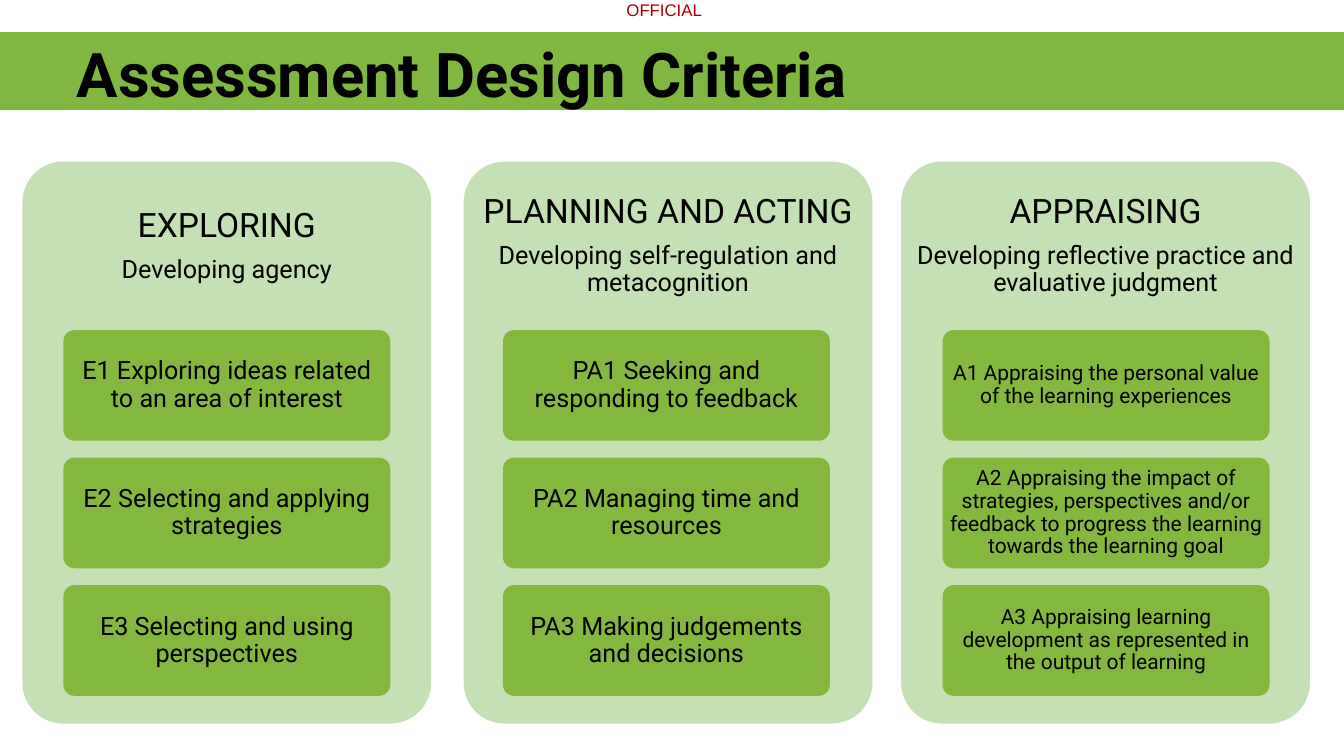
import pptx
import pptx.dml.color
import pptx.enum.shapes
import pptx.enum.text
import pptx.util
from dataclasses import dataclass

Pt = pptx.util.Pt
Shape = pptx.enum.shapes.MSO_SHAPE
Anchor = pptx.enum.text.MSO_ANCHOR
Align = pptx.enum.text.PP_ALIGN


@dataclass
class Theme:
    banner: str = "80B740"
    panel: str = "C5E0B4"
    card: str = "83B73D"
    ink: str = "000000"
    label: str = "A80000"
    font: str = "Roboto"
    label_font: str = "Arial"
    title_size: int = 44
    heading_size: int = 24
    body_size: int = 18
    small_size: int = 15
    label_size: int = 12


class Deck:
    def __init__(self, theme):
        self.theme = theme
        self.prs = pptx.Presentation()
        self.prs.slide_width = Pt(960)
        self.prs.slide_height = Pt(540)
        self.s = self.prs.slides.add_slide(self.prs.slide_layouts[6])

    def box(self, kind, at, fill):
        sp = self.s.shapes.add_shape(kind, *map(Pt, at))
        sp.shadow.inherit = False
        sp.fill.solid()
        sp.fill.fore_color.rgb = pptx.dml.color.RGBColor.from_string(fill)
        sp.line.fill.background()
        if kind == Shape.ROUNDED_RECTANGLE:
            sp.adjustments[0] = 0.1
        return sp

    def frame(self, sp, insets, wrap=True):
        tf = sp.text_frame
        tf.word_wrap = wrap
        tf.vertical_anchor = Anchor.MIDDLE
        tf.margin_left, tf.margin_top, tf.margin_right, tf.margin_bottom = map(Pt, insets)
        return tf

    def style_text(self, p, text, size, color=None, font=None, align=Align.CENTER):
        p.text = text
        p.alignment = align
        p.font.size = Pt(size)
        p.font.name = font or self.theme.font
        p.font.color.rgb = pptx.dml.color.RGBColor.from_string(color or self.theme.ink)

    def label(self, text, at):
        sp = self.s.shapes.add_textbox(*map(Pt, at))
        tf = self.frame(sp, (0, 0, 0, 0), wrap=False)
        self.style_text(tf.paragraphs[0], text, self.theme.label_size,
                        self.theme.label, self.theme.label_font)

    def title(self, text, at):
        sp = self.box(Shape.RECTANGLE, at, self.theme.banner)
        p = self.frame(sp, (54.7, 2.2, 0, 0)).paragraphs[0]
        self.style_text(p, text, self.theme.title_size, align=Align.LEFT)
        p.font.bold = True
        p.space_before = Pt(2.3)

    def panel(self, at, heading, subtitle, heading_height):
        self.box(Shape.ROUNDED_RECTANGLE, at, self.theme.panel)
        left, top, width, _ = at
        sp = self.s.shapes.add_textbox(*map(Pt, (left, top, width, heading_height)))
        tf = self.frame(sp, (7.2, 7.2, 7.2, 7.2))
        lines = (heading, self.theme.heading_size), (subtitle, self.theme.body_size)
        for i, (text, size) in enumerate(lines):
            p = tf.add_paragraph() if i else tf.paragraphs[0]
            self.style_text(p, text, size)
            p.line_spacing = 0.9
            p.space_after = Pt(0.35 * size)

    def card(self, at, text, size, inset):
        sp = self.box(Shape.ROUNDED_RECTANGLE, at, self.theme.card)
        tf = self.frame(sp, (inset, inset * 0.75, inset, inset * 0.75))
        p = tf.paragraphs[0]
        self.style_text(p, text, size)
        p.line_spacing = 0.9


def main():
    theme = Theme()
    deck = Deck(theme)
    columns = [
        (16, "EXPLORING", "Developing agency", theme.body_size, 3.6, [
            "E1 Exploring ideas related to an area of interest",
            "E2 Selecting and applying strategies",
            "E3 Selecting and using perspectives",
        ]),
        (331.2, "PLANNING AND ACTING", "Developing self-regulation and metacognition",
         theme.body_size, 3.6, [
            "PA1 Seeking and responding to feedback",
            "PA2 Managing time and resources",
            "PA3 Making judgements and decisions",
        ]),
        (643.7, "APPRAISING", "Developing reflective practice and evaluative judgment",
         theme.small_size, 2.9, [
            "A1 Appraising the personal value of the learning experiences",
            "A2 Appraising the impact of strategies, perspectives and/or feedback "
            "to progress the learning towards the learning goal",
            "A3 Appraising learning development as represented in the output of learning",
        ]),
    ]
    deck.label("OFFICIAL", (445.7, 0, 57.6, 14.4))
    for col, (left, heading, subtitle, size, inset, cards) in enumerate(columns):
        deck.panel((left, 115.4, 292, 401.5), heading, subtitle, 120.4)
        for row, text in enumerate(cards):
            at = (45.3 + 314 * col, 235.8 + 91.1 * row, 233.5, 79)
            deck.card(at, text, size, inset)
    deck.title("Assessment Design Criteria", (0, 23, 960, 55.6))
    deck.prs.save("out.pptx")


if __name__ == "__main__":
    main()
